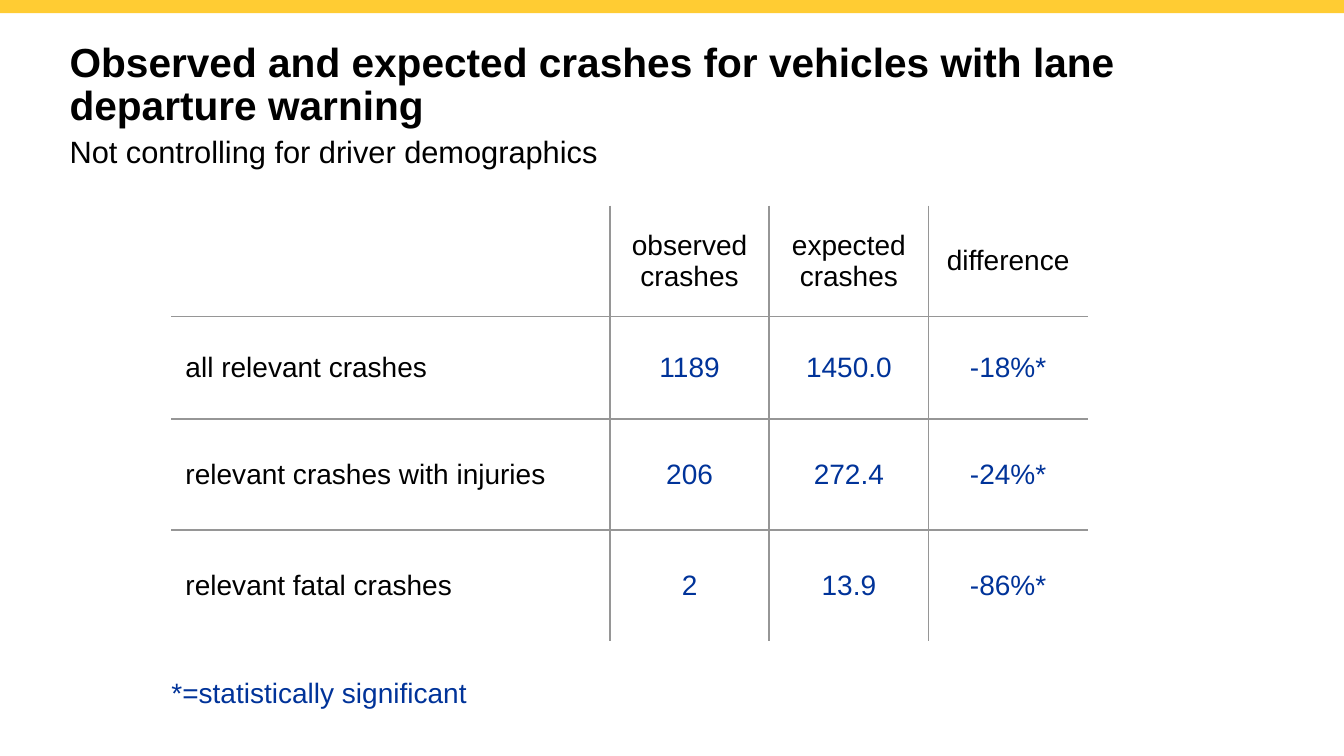
"""Build the slide on observed and expected lane departure crashes."""
from dataclasses import dataclass
from typing import Any

from lxml import etree
from pptx import Presentation, util as u
from pptx.dml.color import RGBColor
from pptx.enum import shapes, text
from pptx.oxml import ns

BLACK = RGBColor(0x00, 0x00, 0x00)
BLUE = RGBColor(0x00, 0x33, 0x99)
GOLD = RGBColor(0xFF, 0xCC, 0x33)
GREY = RGBColor(0x96, 0x96, 0x96)
COLS = [4.35, 1.58, 1.58, 1.58]
ROWS = [1.1, 1.02, 1.1, 1.1]
DATA = [
    ["", "observed crashes", "expected crashes", "difference"],
    ["all relevant crashes", "1189", "1450.0", "-18%*"],
    ["relevant crashes with injuries", "206", "272.4", "-24%*"],
    ["relevant fatal crashes", "2", "13.9", "-86%*"],
]
FLUSH = {f"margin_{side}": 0 for side in ("left", "top", "right", "bottom")}
FRAME = FLUSH | {"word_wrap": True, "auto_size": text.MSO_AUTO_SIZE.SHAPE_TO_FIT_TEXT}
CELL = FLUSH | {
    "margin_left": u.Inches(0.14),
    "margin_right": u.Inches(0.14),
    "vertical_anchor": text.MSO_ANCHOR.MIDDLE,
}
PLAIN = {"first_row": False, "horz_banding": False}


@dataclass
class Label:
    """A line of text with its place and style."""
    words: str
    left: float
    top: float
    width: float
    height: float
    size: int
    color: RGBColor = BLACK
    bold: bool = False
    pitch: int | None = None


LABELS = [
    Label("Observed and expected crashes for vehicles with lane departure warning",
          0.69, 0.42, 12.29, 0.86, 29, bold=True, pitch=31),
    Label("Not controlling for driver demographics",
          0.69, 1.34, 12.29, 0.35, 22, pitch=25),
    Label("*=statistically significant", 1.7, 6.7, 3.88, 0.34, 20, BLUE),
]


def apply(item: Any, form: dict[str, Any]) -> None:
    """Set each format value on the item."""
    for name, value in form.items():
        setattr(item, name, value)


def style(para: Any, size: int, color: RGBColor, bold: bool = False) -> None:
    """Give the paragraph its font."""
    apply(para.font, {"name": "Arial", "size": u.Pt(size), "bold": bold})
    para.font.color.rgb = color


def write(slide: Any, label: Label) -> None:
    """Draw one label as a text box."""
    place = map(u.Inches, (label.left, label.top, label.width, label.height))
    frame = slide.shapes.add_textbox(*place).text_frame
    apply(frame, FRAME)
    para = frame.paragraphs[0]
    para.text = label.words
    if label.pitch:
        para.line_spacing = u.Pt(label.pitch)
    style(para, label.size, label.color, label.bold)


def rule(cell: Any, side: str, shown: bool) -> None:
    """Draw or clear the border on one side of a cell."""
    props = cell._tc.get_or_add_tcPr()
    line = etree.SubElement(props, ns.qn(f"a:ln{side}"), w=str(u.Pt(1.5)))
    if shown:
        fill = etree.SubElement(line, ns.qn("a:solidFill"))
        etree.SubElement(fill, ns.qn("a:srgbClr"), val=str(GREY))
    else:
        etree.SubElement(line, ns.qn("a:noFill"))


def fill(cell: Any, row: int, col: int) -> None:
    """Write one table cell with its inner borders."""
    apply(cell, CELL)
    inner = {"L": col > 0, "R": col < len(COLS) - 1,
             "T": row > 0, "B": row < len(ROWS) - 1}
    for side, shown in inner.items():
        rule(cell, side, shown)
    cell.fill.background()
    para = cell.text_frame.paragraphs[0]
    para.text = DATA[row][col]
    if col:
        para.alignment = text.PP_ALIGN.CENTER
    style(para, 20, BLUE if row and col else BLACK)


def grid(slide: Any) -> None:
    """Draw the table of crashes."""
    place = map(u.Inches, (1.7, 2.04, sum(COLS), sum(ROWS)))
    table = slide.shapes.add_table(len(ROWS), len(COLS), *place).table
    apply(table, PLAIN)
    for col, width in zip(table.columns, COLS):
        col.width = u.Inches(width)
    for row, height in zip(table.rows, ROWS):
        row.height = u.Inches(height)
    for row in range(len(ROWS)):
        for col in range(len(COLS)):
            fill(table.cell(row, col), row, col)


def main() -> None:
    """Build and save the slide."""
    deck = Presentation()
    apply(deck, {"slide_width": u.Inches(13.33), "slide_height": u.Inches(7.5)})
    slide = deck.slides.add_slide(deck.slide_layouts[6])
    band = slide.shapes.add_shape(
        shapes.MSO_SHAPE.RECTANGLE, 0, 0, deck.slide_width, u.Inches(0.13))
    band.shadow.inherit = False
    band.fill.solid()
    band.fill.fore_color.rgb = GOLD
    band.line.fill.background()
    for label in LABELS:
        write(slide, label)
    grid(slide)
    deck.save("out.pptx")


if __name__ == "__main__":
    main()
